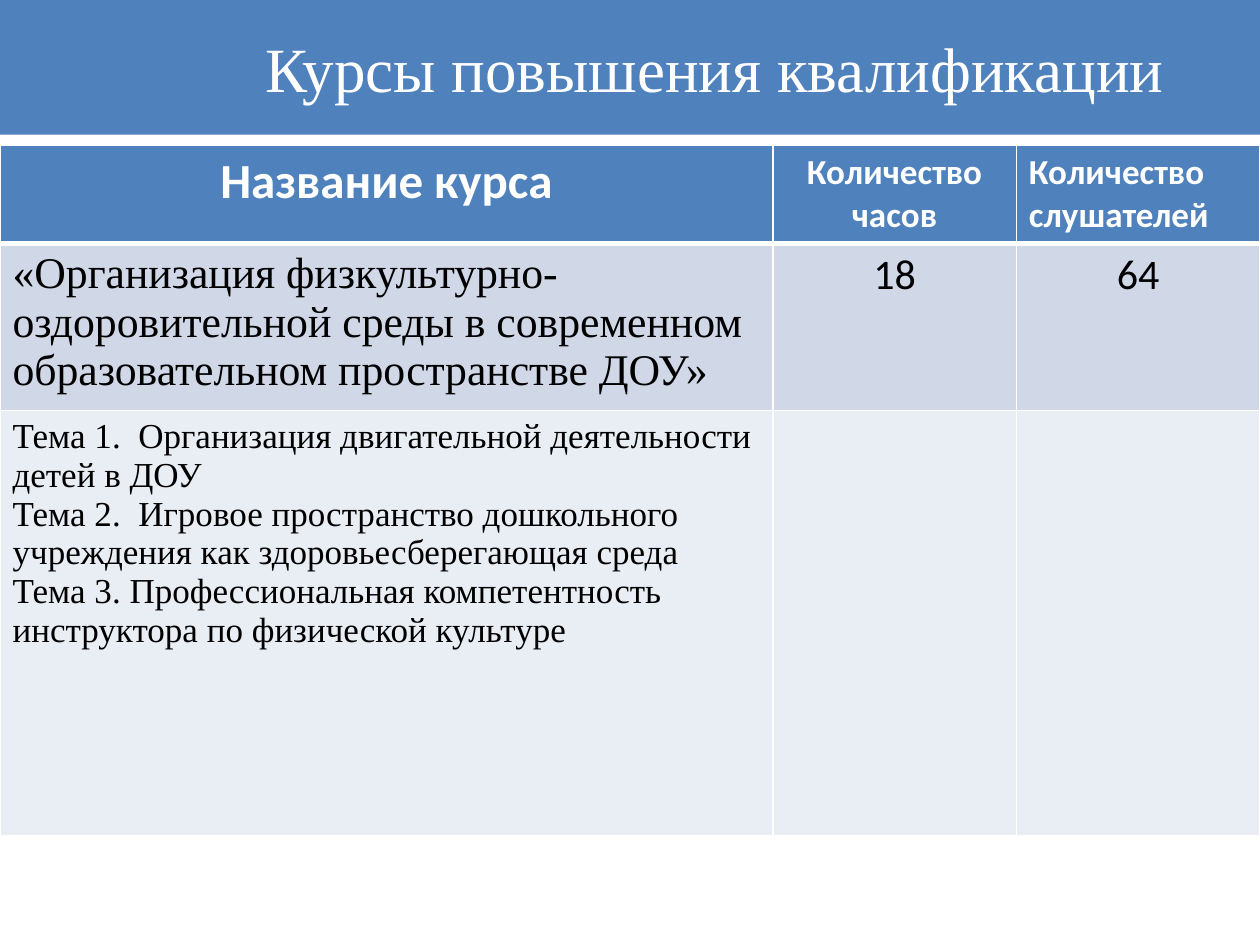
from dataclasses import dataclass

from lxml.etree import SubElement
from pptx import Presentation
from pptx.dml.color import RGBColor
from pptx.enum.shapes import MSO_SHAPE as Shape
from pptx.enum.text import MSO_ANCHOR as Anchor, PP_ALIGN as Align
from pptx.oxml.ns import qn
from pptx.table import _Cell as Cell
from pptx.text.text import _Paragraph as Paragraph
from pptx.util import Pt

BLUE = RGBColor(0x4F, 0x81, 0xBD)
PALE_BLUE = RGBColor(0xD0, 0xD8, 0xE8)
PALEST_BLUE = RGBColor(0xE9, 0xED, 0xF4)
WHITE = RGBColor(0xFF, 0xFF, 0xFF)
BLACK = RGBColor(0x00, 0x00, 0x00)
SANS = "Calibri"
SERIF = "Times New Roman"


@dataclass(frozen=True)
class Entry:
    lines: tuple[str, ...] = ()
    size: float = 20
    font: str = SANS
    align: Align = Align.CENTER


@dataclass(frozen=True)
class Band:
    height: float
    fill: RGBColor
    color: RGBColor
    bold: bool
    bottom: float
    entries: tuple[Entry, ...]


COLUMN_WIDTHS = (441.6, 139.2, 139.2)
BANDS = (
    Band(56, BLUE, WHITE, True, 3, (
        Entry(("Название курса",), 28),
        Entry(("Количество", "часов")),
        Entry(("Количество слушателей",), align=Align.LEFT),
    )),
    Band(95.5, PALE_BLUE, BLACK, False, 1, (
        Entry(("«Организация физкультурно-оздоровительной среды в современном "
               "образовательном пространстве ДОУ»",), 25, SERIF, Align.LEFT),
        Entry(("18",), 24),
        Entry(("64",), 24),
    )),
    Band(243, PALEST_BLUE, BLACK, False, 1, (
        Entry((
            "Тема 1.  Организация двигательной деятельности детей в ДОУ",
            "Тема 2.  Игровое пространство дошкольного учреждения как "
            "здоровьесберегающая среда",
            "Тема 3. Профессиональная компетентность инструктора по "
            "физической культуре",
        ), 20, SERIF, Align.LEFT),
        Entry(),
        Entry(),
    )),
)


def style(paragraph: Paragraph, entry: Entry, color: RGBColor, bold: bool) -> None:
    paragraph.alignment = entry.align
    font = paragraph.font
    font.name, font.size, font.bold = entry.font, Pt(entry.size), bold
    font.color.rgb = color


def add_borders(cell: Cell, top: float, bottom: float) -> None:
    properties = cell._tc.get_or_add_tcPr()
    for side, width in (("L", 1), ("R", 1), ("T", top), ("B", bottom)):
        line = SubElement(properties, qn(f"a:ln{side}"), w=str(Pt(width)))
        SubElement(SubElement(line, qn("a:solidFill")), qn("a:srgbClr"), val=str(WHITE))


def fill_cell(cell: Cell, entry: Entry, band: Band, top: float) -> None:
    add_borders(cell, top, band.bottom)
    cell.fill.solid()
    cell.fill.fore_color.rgb = band.fill
    frame = cell.text_frame
    frame.text = "\n".join(entry.lines)
    for paragraph in frame.paragraphs:
        style(paragraph, entry, band.color, band.bold)


def add_heading(slide) -> None:
    heading = slide.shapes.add_shape(Shape.RECTANGLE, 0, 0, Pt(720), Pt(77))
    heading.shadow.inherit = False
    heading.fill.solid()
    heading.fill.fore_color.rgb = BLUE
    heading.line.fill.background()
    frame = heading.text_frame
    frame.word_wrap = True
    frame.vertical_anchor = Anchor.MIDDLE
    frame.margin_left = Pt(104)
    frame.text = "Курсы повышения квалификации"
    style(frame.paragraphs[0], Entry(size=36, font=SERIF), WHITE, False)


def add_courses(slide) -> None:
    height = sum(band.height for band in BANDS)
    courses = slide.shapes.add_table(
        len(BANDS), len(COLUMN_WIDTHS), 0, Pt(83), Pt(720), Pt(height)).table
    for column, width in zip(courses.columns, COLUMN_WIDTHS):
        column.width = Pt(width)
    top = 1
    for row, band in zip(courses.rows, BANDS):
        row.height = Pt(band.height)
        for cell, entry in zip(row.cells, band.entries):
            fill_cell(cell, entry, band, top)
        top = band.bottom


def main() -> None:
    deck = Presentation()
    deck.slide_width, deck.slide_height = Pt(720), Pt(540)
    slide = deck.slides.add_slide(deck.slide_layouts[6])
    add_heading(slide)
    add_courses(slide)
    deck.save("out.pptx")


if __name__ == "__main__":
    main()
